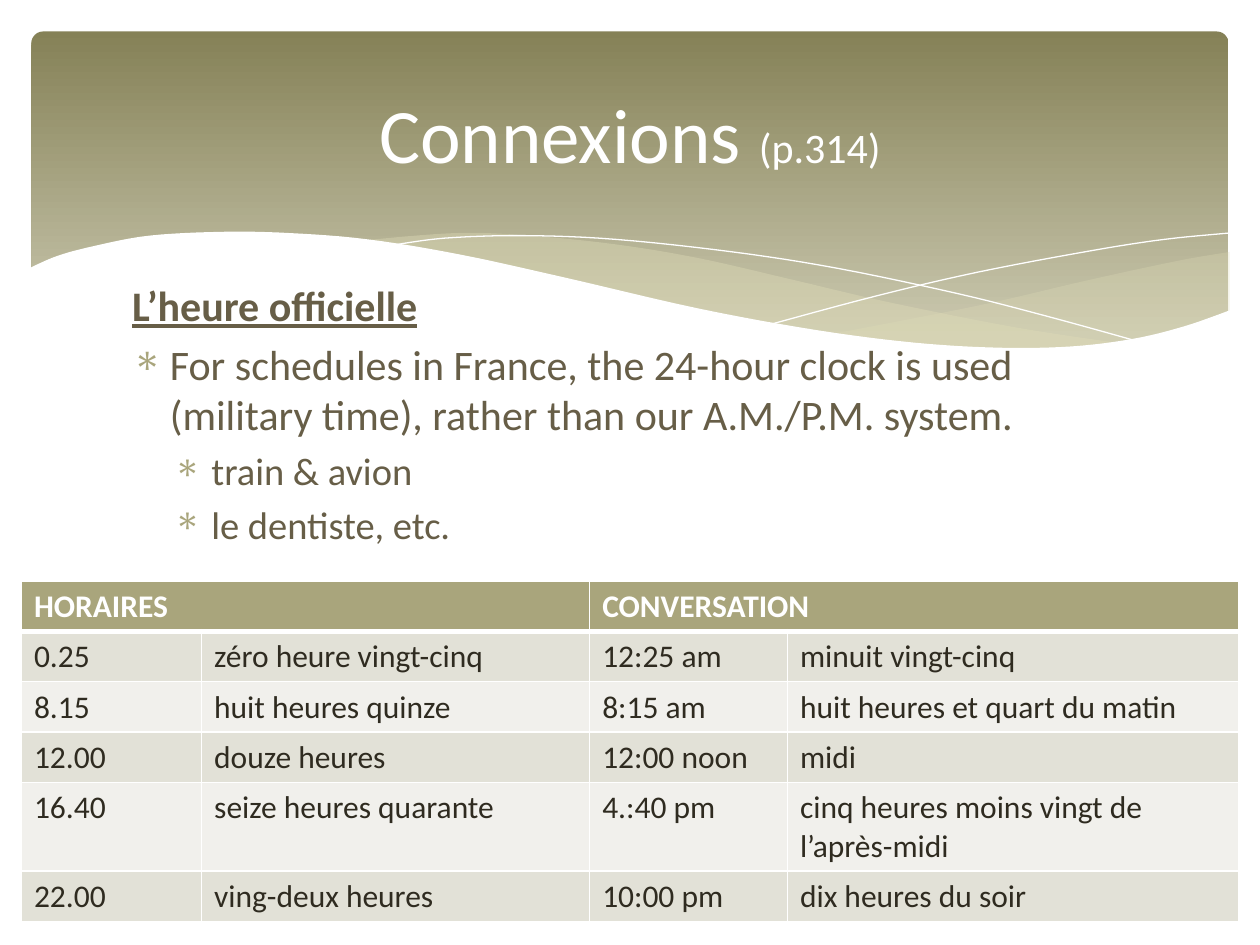
import pptx
import pptx.util
import pptx.dml.color
import pptx.enum.shapes
import pptx.enum.text
import pptx.oxml
import pptx.oxml.ns

W, H = 10, 7.5
FONT = "Calibri"
COLORS = {
    "white": "FFFFFF", "banner_top": "858157", "banner_bottom": "CBC9B0",
    "wave": "DFDCB7", "text": "675E47", "accent": "A9A57C",
    "cell_text": "2F2B20", "band_dark": "E2E1D7", "band_light": "F1F0EC",
}

# Content
TITLE = [("Connexions ", 44), ("(p.314)", 24)]
BODY = [  # text, size, left indent (None: heading without bullet)
    ("L’heure officielle", 24, None),
    ("For schedules in France, the 24-hour clock is used (military time), "
     "rather than our A.M./P.M. system.", 24, 0.3),
    ("train & avion", 22, 0.63),
    ("le dentiste, etc.", 22, 0.63),
]
HEADERS = ["HORAIRES", "CONVERSATION"]  # each spans two columns
TIMES = [
    ("0.25", "zéro heure vingt-cinq", "12:25 am", "minuit vingt-cinq"),
    ("8.15", "huit heures quinze", "8:15 am", "huit heures et quart du matin"),
    ("12.00", "douze heures", "12:00 noon", "midi"),
    ("16.40", "seize heures quarante", "4.:40 pm",
     "cinq heures moins vingt de l’après-midi"),
    ("22.00", "ving-deux heures", "10:00 pm", "dix heures du soir"),
]
COL_WIDTHS = [1.43, 3.08, 1.57, 3.58]
ROW_HEIGHT = 0.4

# Waves: smooth curves through a few points, drawn one after another
WAVES = [  # curves, fill opacity in % (None: open white line)
    ([[(9.76, 2), (9.35, 2.07), (8.61, 2.23), (7.79, 2.42), (6.61, 2.65)],
      [(6.61, 2.65), (7.19, 2.72), (7.69, 2.77), (8.14, 2.78), (8.63, 2.75),
       (9.05, 2.69), (9.42, 2.59), (9.76, 2.47)]], 29),
    ([[(8.93, 2.73), (8.07, 2.6), (7.06, 2.4), (6.29, 2.22), (5.55, 2.05),
       (4.89, 1.94), (4.2, 1.87), (3.61, 1.85), (2.86, 1.91)],
      [(2.86, 1.91), (3.62, 2.03), (4.49, 2.22), (5.3, 2.4), (6.18, 2.58),
       (6.95, 2.7), (7.61, 2.77), (8.18, 2.78), (8.93, 2.73)]], 40),
    ([[(3.09, 1.95), (3.53, 1.89), (4.16, 1.87), (4.89, 1.9), (5.82, 2),
       (6.65, 2.13), (7.6, 2.33), (8.31, 2.51), (9.07, 2.72)]], None),
    ([[(6.13, 2.57), (6.95, 2.35), (7.76, 2.16), (8.66, 1.99), (9.24, 1.9),
       (9.75, 1.85)]], None),
    ([[(9.77, 2.46), (9.4, 2.59), (8.99, 2.69), (8.5, 2.75), (7.93, 2.76),
       (7.26, 2.72), (6.48, 2.62), (5.55, 2.45), (4.47, 2.2), (3.65, 2.02),
       (2.92, 1.9), (2.3, 1.85), (1.77, 1.84), (1.19, 1.87), (0.76, 1.95),
       (0.46, 2.03), (0.23, 2.13)],
      [(0.23, 3.29)], [(9.77, 3.29)]], 100),
]


def rgb(name):
    return pptx.dml.color.RGBColor.from_string(COLORS[name])


def inches(*values):
    return [pptx.util.Inches(v) for v in values]


def xml(tag, attrs="", inner=""):
    ns = pptx.oxml.ns.nsdecls("a")
    return pptx.oxml.parse_xml(f"<a:{tag} {ns} {attrs}>{inner}</a:{tag}>")


def solid(name):
    return f'<a:solidFill><a:srgbClr val="{COLORS[name]}"/></a:solidFill>'


def style(r, size, color, bold=False):
    r.font.name, r.font.size, r.font.bold = FONT, pptx.util.Pt(size), bold
    r.font.color.rgb = rgb(color)


def smooth(points, steps=6):
    """Catmull-Rom spline through the points."""
    ends = [points[0], *points, points[-1]]
    out = [points[0]]
    for a, b, c, d in zip(ends, ends[1:], ends[2:], ends[3:]):
        for t in (i / steps for i in range(1, steps + 1)):
            out.append(tuple(
                0.5 * (2 * q + (r - p) * t + (2 * p - 5 * q + 4 * r - u) * t**2
                       + (3 * q - p - 3 * r + u) * t**3)
                for p, q, r, u in zip(a, b, c, d)))
    return out


def add_wave(s, curves, opacity):
    points = [inches(*pt) for curve in curves for pt in smooth(curve)]
    fb = s.shapes.build_freeform(*points[0])
    fb.add_line_segments(points[1:], close=opacity is not None)
    sp = fb.convert_to_shape()
    sp.shadow.inherit = False
    if opacity is None:
        sp.fill.background()
        sp.line.color.rgb = rgb("white")
        sp.line.width = pptx.util.Pt(0)
        return
    sp.line.fill.background()
    sp.fill.solid()
    sp.fill.fore_color.rgb = rgb("white" if opacity == 100 else "wave")
    if opacity < 100:
        clr = sp._element.spPr.find(".//" + pptx.oxml.ns.qn("a:srgbClr"))
        clr.append(xml("alpha", f'val="{opacity * 1000}"'))


def add_banner(s):
    sp = s.shapes.add_shape(pptx.enum.shapes.MSO_SHAPE.ROUNDED_RECTANGLE,
                            *inches(0.25, 0.25, W - 0.5, 2.7))
    sp.adjustments[0] = 0.034
    sp.shadow.inherit = False
    sp.line.fill.background()
    sp.fill.gradient()
    sp.fill.gradient_angle = 270
    stops = [("banner_top", 0), ("banner_bottom", 0.9)]
    for stop, (color, position) in zip(sp.fill.gradient_stops, stops):
        stop.color.rgb, stop.position = rgb(color), position


def add_text(s, *box):
    tf = s.shapes.add_textbox(*inches(*box)).text_frame
    tf.word_wrap = True
    return tf


def add_body(s):
    tf = add_text(s, 0.95, 2.17, 8.1, 3.77)
    for i, (text, size, indent) in enumerate(BODY):
        p = tf.add_paragraph() if i else tf.paragraphs[0]
        p.text = text
        p.space_before = pptx.util.Pt(size * 0.2)
        heading = indent is None
        style(p.runs[0], size, "text", bold=heading)
        p.runs[0].font.underline = heading
        if not heading:
            pPr = p._p.get_or_add_pPr()
            pPr.set("marL", str(pptx.util.Inches(indent)))
            pPr.set("indent", str(pptx.util.Inches(-0.3)))
            pPr.append(xml("buClr", "", f'<a:srgbClr val="{COLORS["accent"]}"/>'))
            pPr.append(xml("buFont", 'typeface="Symbol"'))
            pPr.append(xml("buChar", 'char="∗"'))


def fill_cell(cell, text, fill, color, header=False):
    cell.text = text
    cell.fill.solid()
    cell.fill.fore_color.rgb = rgb(fill)
    for r in cell.text_frame.paragraphs[0].runs:
        style(r, 18, color, bold=header)
    tcPr = cell._tc.get_or_add_tcPr()
    for i, side in enumerate("LRTB"):
        width = pptx.util.Pt(3 if header and side == "B" else 1)
        tcPr.insert(i, xml("ln" + side, f'w="{width}"', solid("white")))


def add_times(s):
    rows, cols = len(TIMES) + 1, len(COL_WIDTHS)
    box = inches(0.17, 4.61, sum(COL_WIDTHS), rows * ROW_HEIGHT)
    table = s.shapes.add_table(rows, cols, *box).table
    for col, width in zip(table.columns, COL_WIDTHS):
        col.width = pptx.util.Inches(width)
    for c in range(cols):
        text = "" if c % 2 else HEADERS[c // 2]
        fill_cell(table.cell(0, c), text, "accent", "white", header=True)
    for c in range(0, cols, 2):
        table.cell(0, c).merge(table.cell(0, c + 1))
    for i, row in enumerate(TIMES, 1):
        band = "band_dark" if i % 2 else "band_light"
        for c, text in enumerate(row):
            fill_cell(table.cell(i, c), text, band, "cell_text")


def main():
    prs = pptx.Presentation()
    prs.slide_width, prs.slide_height = inches(W, H)
    s = prs.slides.add_slide(prs.slide_layouts[6])

    # Banner and waves
    add_banner(s)
    for curves, opacity in WAVES:
        add_wave(s, curves, opacity)

    # Body, title and table
    add_body(s)
    tf = add_text(s, 0.5, 0.37, W - 1, 1.37)
    tf.vertical_anchor = pptx.enum.text.MSO_ANCHOR.MIDDLE
    p = tf.paragraphs[0]
    p.alignment = pptx.enum.text.PP_ALIGN.CENTER
    for text, size in TITLE:
        r = p.add_run()
        r.text = text
        style(r, size, "white")
    add_times(s)
    prs.save("out.pptx")


if __name__ == "__main__":
    main()
